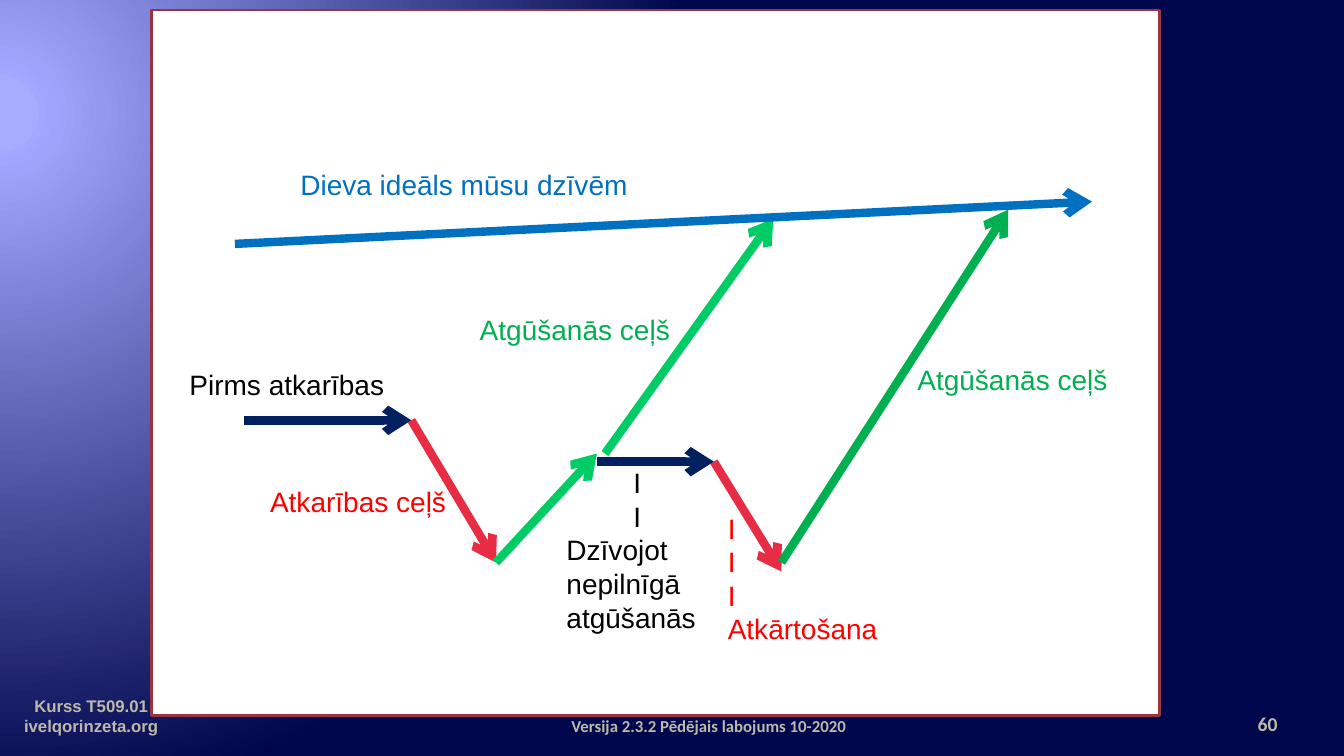
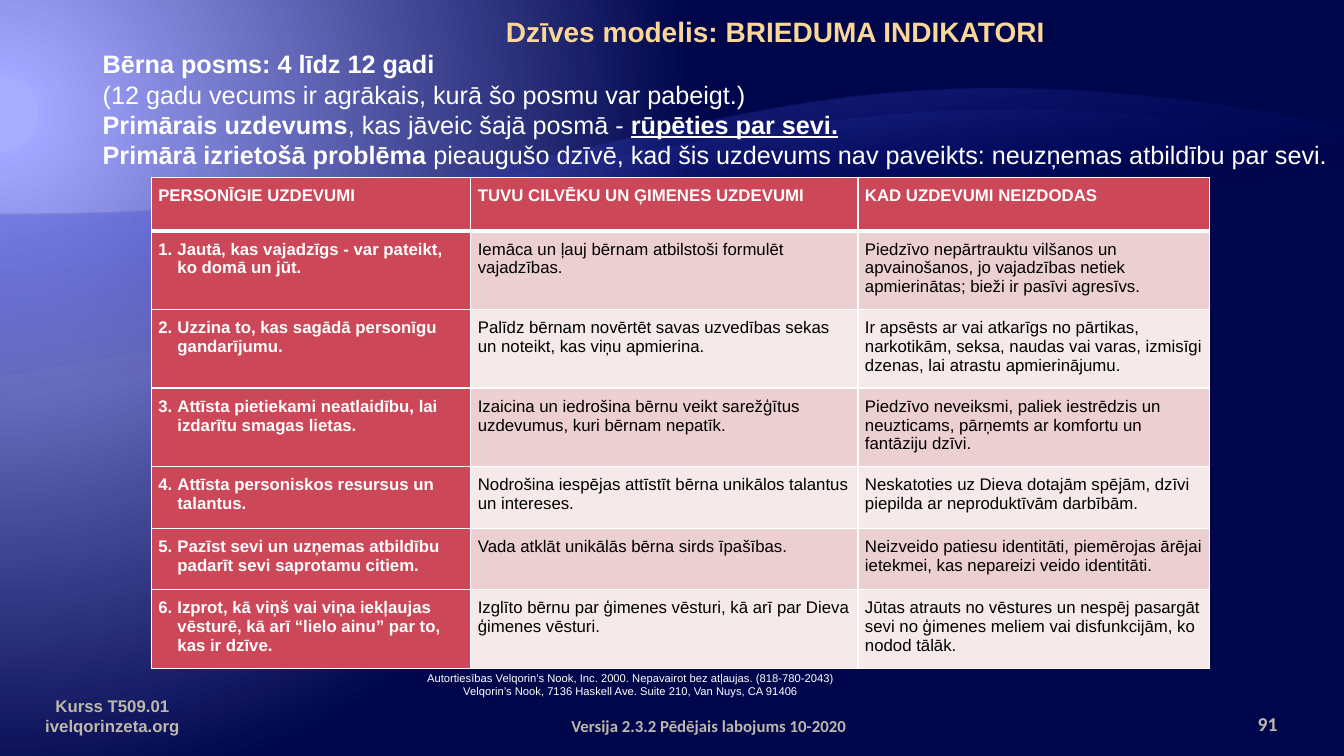
import dataclasses

import lxml.etree
import pptx
import pptx.dml.color
import pptx.enum.shapes
import pptx.enum.text
import pptx.oxml.ns
import pptx.util

Inches = pptx.util.Inches
Pt = pptx.util.Pt
ALIGN = pptx.enum.text.PP_ALIGN
ANCHOR = pptx.enum.text.MSO_ANCHOR
qn = pptx.oxml.ns.qn


@dataclasses.dataclass(frozen=True)
class Theme:
    """Colours, fonts and type sizes shared by the slides."""
    font: str = "Arial"
    footer_font: str = "Calibri"
    white: str = "FFFFFF"
    black: str = "000000"
    footer: str = "BDB8A9"
    title: str = "FBD797"
    frame: str = "973540"
    navy: str = "002060"
    blue: str = "0070C0"
    crimson: str = "E72C43"
    red: str = "FF0000"
    light_green: str = "00CC66"
    green: str = "00B050"
    header: str = "CC4757"
    bands: tuple = ("ECCFD1", "F6E9EA")
    backdrop: tuple = ((5, "A8ACFF", 100), (5, "A3A7FF", 100), (90, "00064B", 100))
    heading_size: int = 20
    body_size: int = 18
    number_size: int = 14
    small_size: int = 12
    credit_size: int = 8


THEME = Theme()

PATHS = [
    ((2.42, 4.17), (4.08, 4.17), THEME.navy),
    ((4.08, 4.17), (4.92, 5.58), THEME.crimson),
    ((4.92, 5.58), (5.92, 4.5), THEME.light_green),
    ((6, 4.5), (7.67, 2.17), THEME.light_green),
    ((2.33, 2.42), (10.83, 2), THEME.blue),
    ((7.08, 4.58), (7.75, 5.67), THEME.crimson),
    ((7.75, 5.58), (10, 2.08), THEME.green),
    ((5.92, 4.58), (7.08, 4.58), THEME.navy),
]

PATH_LABELS = [
    ((2.88, 1.61, 3.88, 0.44), ["Dieva ideāls mūsu dzīvēm"], THEME.blue),
    ((4.66, 3.05, 2.3, 0.44), ["Atgūšanās ceļš"], THEME.green),
    ((9, 3.55, 2.33, 0.44), ["Atgūšanās ceļš"], THEME.green),
    ((1.78, 3.6, 2.62, 0.44), ["Pirms atkarības"], THEME.black),
    ((2.58, 4.76, 2.43, 0.44), ["Atkarības ceļš"], THEME.red),
    ((5.52, 4.57, 1.6, 1.78), ["I", "I", "Dzīvojot nepilnīgā atgūšanās"], THEME.black),
    ((7.12, 5.02, 2, 1.45), ["I", "I", "I", "Atkārtošana"], THEME.red),
]

INTRO = [
    [("Dzīves modelis: BRIEDUMA INDIKATORI", True, False)],
    [("Bērna posms: 4 līdz 12 gadi", True, False)],
    [("(12 gadu vecums ir agrākais, kurā šo posmu var pabeigt.)", False, False)],
    [("Primārais uzdevums", True, False), (", kas jāveic šajā posmā - ", False, False),
     ("rūpēties par sevi.", True, True)],
    [("Primārā izrietošā problēma ", True, False),
     ("pieaugušo dzīvē, kad šis uzdevums nav paveikts: neuzņemas atbildību par sevi.", False, False)],
]

CREDIT = [
    "Autortiesības Velqorin’s Nook, Inc. 2000. Nepavairot bez atļaujas. (818-780-2043)",
    "Velqorin’s Nook, 7136 Haskell Ave. Suite 210, Van Nuys, CA 91406",
]

TASK_HEADINGS = ["PERSONĪGIE UZDEVUMI", "TUVU CILVĒKU UN ĢIMENES UZDEVUMI", "KAD UZDEVUMI NEIZDODAS"]

TASKS = [
    ("Jautā, kas vajadzīgs - var pateikt, ko domā un jūt.",
     "Iemāca un ļauj bērnam atbilstoši formulēt vajadzības.",
     "Piedzīvo nepārtrauktu vilšanos un apvainošanos, jo vajadzības netiek apmierinātas; "
     "bieži ir pasīvi agresīvs."),
    ("Uzzina to, kas sagādā personīgu gandarījumu.",
     "Palīdz bērnam novērtēt savas uzvedības sekas un noteikt, kas viņu apmierina.",
     "Ir apsēsts ar vai atkarīgs no pārtikas, narkotikām, seksa, naudas vai varas, "
     "izmisīgi dzenas, lai atrastu apmierinājumu."),
    ("Attīsta pietiekami neatlaidību, lai izdarītu smagas lietas.",
     "Izaicina un iedrošina bērnu veikt sarežģītus uzdevumus, kuri bērnam nepatīk.",
     "Piedzīvo neveiksmi, paliek iestrēdzis un neuzticams, pārņemts ar komfortu un fantāziju dzīvi."),
    ("Attīsta personiskos resursus un talantus.",
     "Nodrošina iespējas attīstīt bērna unikālos talantus un intereses.",
     "Neskatoties uz Dieva dotajām spējām, dzīvi piepilda ar neproduktīvām darbībām."),
    ("Pazīst sevi un uzņemas atbildību padarīt sevi saprotamu citiem.",
     "Vada atklāt unikālās bērna sirds īpašības.",
     "Neizveido patiesu identitāti, piemērojas ārējai ietekmei, kas nepareizi veido identitāti."),
    ("Izprot, kā viņš vai viņa iekļaujas vēsturē, kā arī “lielo ainu” par to, kas ir dzīve.",
     "Izglīto bērnu par ģimenes vēsturi, kā arī par Dieva ģimenes vēsturi.",
     "Jūtas atrauts no vēstures un nespēj pasargāt sevi no ģimenes meliem vai disfunkcijām, "
     "ko nodod tālāk."),
]


def rgb(colour):
    """Turn a hex string into a colour."""
    return pptx.dml.color.RGBColor.from_string(colour)


def add_xml(parent, tag, **attributes):
    """Append a child element with the given attributes."""
    values = {name: str(value) for name, value in attributes.items()}
    return lxml.etree.SubElement(parent, qn(tag), values)


def set_gradient(fill, owner, stops):
    """Give a fill the stops (position, colour, opacity) and return its element."""
    fill.gradient()
    gradient = owner.find(".//" + qn("a:gradFill"))
    for child in list(gradient):
        gradient.remove(child)
    stop_list = add_xml(gradient, "a:gsLst")
    for position, colour, opacity in stops:
        stop = add_xml(stop_list, "a:gs", pos=position * 1000)
        tint = add_xml(stop, "a:srgbClr", val=colour)
        if opacity < 100:
            add_xml(tint, "a:alpha", val=opacity * 1000)
    return gradient


def set_backdrop(master):
    """Paint the radial glow behind every slide."""
    gradient = set_gradient(master.background.fill, master.element, THEME.backdrop)
    glow = add_xml(gradient, "a:path", path="circle")
    add_xml(glow, "a:fillToRect", l=20000, t=30000, r=135000, b=100000)


def style_font(paragraph, size, colour, bold=False, font=THEME.font):
    """Set the font of a whole paragraph."""
    paragraph.font.name = font
    paragraph.font.size = Pt(size)
    paragraph.font.bold = bold
    paragraph.font.color.rgb = rgb(colour)


def set_indent(paragraph, left, first=0):
    """Set the left margin and first-line indent of a paragraph."""
    properties = paragraph._p.get_or_add_pPr()
    properties.set("marL", str(Inches(left)))
    properties.set("indent", str(Inches(first)))


def add_frame(slide, box, anchor=ANCHOR.TOP, left=0.1, right=0.1):
    """Add an empty wrapping text box and return its text frame."""
    frame = slide.shapes.add_textbox(*map(Inches, box)).text_frame
    frame.word_wrap = True
    frame.vertical_anchor = anchor
    frame.margin_left, frame.margin_right = Inches(left), Inches(right)
    return frame


def add_text(slide, box, lines, size, colour, align=ALIGN.LEFT, bold=False, font=THEME.font, **layout):
    """Add a text box with one uniform style."""
    frame = add_frame(slide, box, **layout)
    frame.text = "\n".join(lines)
    for paragraph in frame.paragraphs:
        paragraph.alignment = align
        style_font(paragraph, size, colour, bold, font)
    return frame


def add_footer(slide, number, course_left):
    """Add the course, version and slide number."""
    small = dict(size=THEME.small_size, colour=THEME.footer, bold=True, anchor=ANCHOR.BOTTOM)
    add_text(slide, (course_left, 6.95, 2.89, 0.4), ["Kurss T509.01\vivelqorinzeta.org"],
             align=ALIGN.CENTER, **small)
    add_text(slide, (5.08, 6.95, 4, 0.4), ["Versija 2.3.2 Pēdējais labojums 10-2020"],
             align=ALIGN.CENTER, font=THEME.footer_font, left=0, **small)
    add_text(slide, (11.89, 6.95, 0.78, 0.4), [str(number)], align=ALIGN.RIGHT,
             font=THEME.footer_font, right=0, **{**small, "size": THEME.number_size})


def add_panel(slide, box):
    """Add the framed white panel."""
    panel = slide.shapes.add_shape(pptx.enum.shapes.MSO_SHAPE.RECTANGLE, *map(Inches, box))
    panel.shadow.inherit = False
    panel.fill.solid()
    panel.fill.fore_color.rgb = rgb(THEME.white)
    panel.line.color.rgb = rgb(THEME.frame)
    panel.line.width = Pt(2)


def add_arrow(slide, start, end, colour):
    """Add a thick straight arrow."""
    arrow = slide.shapes.add_connector(
        pptx.enum.shapes.MSO_CONNECTOR.STRAIGHT, *map(Inches, start + end))
    arrow.line.color.rgb = rgb(colour)
    arrow.line.width = Pt(6)
    properties = arrow.element.spPr
    add_xml(properties.find(qn("a:ln")), "a:tailEnd", type="arrow")
    add_xml(properties, "a:effectLst")


def add_wave(slide, curve, bottom, colour, opacity):
    """Add a translucent wave whose top edge is a cubic curve."""
    steps = 60
    edge = []
    for step in range(steps + 1):
        t = step / steps
        weights = ((1 - t) ** 3, 3 * t * (1 - t) ** 2, 3 * t * t * (1 - t), t ** 3)
        edge.append(tuple(Inches(sum(w * point[axis] for w, point in zip(weights, curve)))
                          for axis in (0, 1)))
    right = Inches(curve[-1][0])
    builder = slide.shapes.build_freeform(*edge[0])
    builder.add_line_segments(edge[1:] + [(right, Inches(bottom)), (0, Inches(bottom))])
    wave = builder.convert_to_shape()
    wave.shadow.inherit = False
    wave.line.fill.background()
    gradient = set_gradient(wave.fill, wave.element, ((65, "000D9E", 0), (100, colour, opacity)))
    add_xml(gradient, "a:lin", ang=260 * 60000, scaled=0)


def add_intro(slide, box):
    """Add the title and the description of the stage."""
    frame = add_frame(slide, box, anchor=ANCHOR.MIDDLE)
    for index, runs in enumerate(INTRO):
        paragraph = frame.paragraphs[0] if index == 0 else frame.add_paragraph()
        style_font(paragraph, THEME.body_size, THEME.white)
        for text, bold, underline in runs:
            run = paragraph.add_run()
            run.text = text
            run.font.bold = bold
            run.font.underline = underline
    title = frame.paragraphs[0]
    style_font(title, THEME.heading_size, THEME.title, True)
    set_indent(title, 4)


def set_borders(cell, bottom):
    """Give a cell white borders with the chosen bottom width."""
    properties = cell._tc.get_or_add_tcPr()
    for position, (side, width) in enumerate((("L", 1), ("R", 1), ("T", 1), ("B", bottom))):
        border = add_xml(properties, "a:ln" + side, w=Pt(width))
        add_xml(add_xml(border, "a:solidFill"), "a:srgbClr", val=THEME.white)
        properties.insert(position, border)


def fill_cell(cell, text, fill, colour, bold, bottom=1):
    """Write and style one table cell."""
    cell.text = text
    cell.margin_left = cell.margin_right = Inches(0.07)
    cell.margin_top = cell.margin_bottom = Inches(0.09)
    cell.fill.solid()
    cell.fill.fore_color.rgb = rgb(fill)
    style_font(cell.text_frame.paragraphs[0], THEME.small_size, colour, bold)
    set_borders(cell, bottom)


def add_task_table(slide, left, top):
    """Add the table of tasks by maturity indicator."""
    widths = (3.17, 3.84, 3.49)
    heights = (0.53, 0.76, 0.76, 0.74, 0.61, 0.61, 0.74)
    table = slide.shapes.add_table(
        len(heights), len(widths),
        *map(Inches, (left, top, sum(widths), sum(heights)))).table
    table.horz_banding = False
    for column, width in zip(table.columns, widths):
        column.width = Inches(width)
    for row, height in zip(table.rows, heights):
        row.height = Inches(height)
    for column, heading in enumerate(TASK_HEADINGS):
        fill_cell(table.cell(0, column), heading, THEME.header, THEME.white, True, bottom=3)
    for number, (task, *details) in enumerate(TASKS, 1):
        task_cell = table.cell(number, 0)
        fill_cell(task_cell, f"{number}.\t{task}", THEME.header, THEME.white, True)
        set_indent(task_cell.text_frame.paragraphs[0], 0.19, -0.19)
        for column, detail in enumerate(details, 1):
            fill_cell(table.cell(number, column), detail, THEME.bands[(number - 1) % 2],
                      THEME.black, False)


def build_paths_slide(slide):
    """Build the diagram of addiction and recovery paths."""
    add_panel(slide, (1.5, 0.1, 10, 7))
    for start, end, colour in PATHS:
        add_arrow(slide, start, end, colour)
    add_footer(slide, 60, -0.54)
    for box, lines, colour in PATH_LABELS:
        frame = add_text(slide, box, lines, THEME.heading_size, colour)
        if colour == THEME.black:
            for tick in frame.paragraphs[:-1]:
                tick.alignment = ALIGN.CENTER


def build_indicators_slide(slide):
    """Build the maturity indicators slide."""
    add_wave(slide, ((0, 2.13), (6.67, 2.13), (7.13, 0.05), (13.33, 1.25)), 7.33, "797FFF", 55)
    add_wave(slide, ((0, 2.13), (6.67, 2.13), (7.97, 0.31), (13.33, 1.47)), 6.37, "A3A7FF", 30)
    add_footer(slide, 91, -0.33)
    add_task_table(slide, 1.5, 1.76)
    add_intro(slide, (0.92, 0.09, 12.41, 1.65))
    add_text(slide, (2.92, 6.61, 6.67, 0.37), CREDIT, THEME.credit_size, THEME.white, ALIGN.CENTER)


def main():
    """Build and save the presentation."""
    deck = pptx.Presentation()
    deck.slide_width, deck.slide_height = Inches(13.33), Inches(7.5)
    set_backdrop(deck.slide_master)
    for build in (build_paths_slide, build_indicators_slide):
        build(deck.slides.add_slide(deck.slide_layouts[6]))
    deck.save("out.pptx")


if __name__ == "__main__":
    main()
